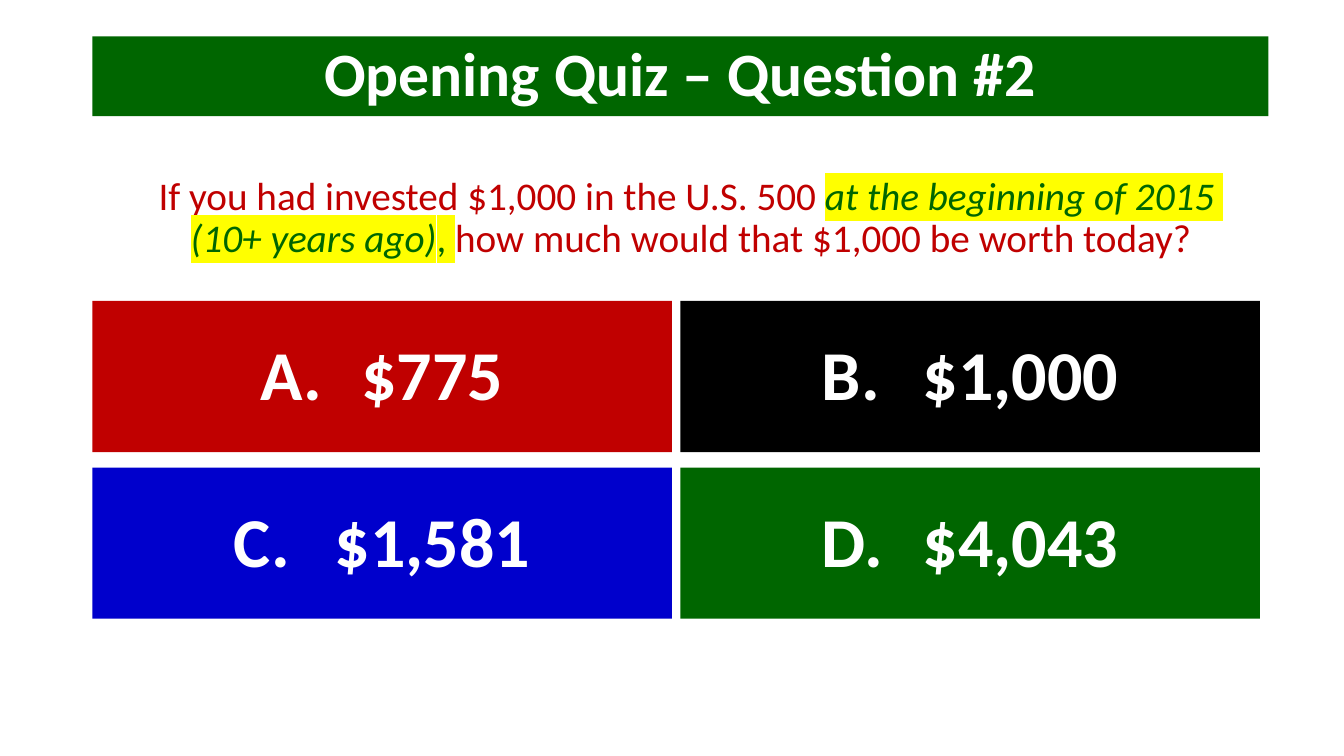
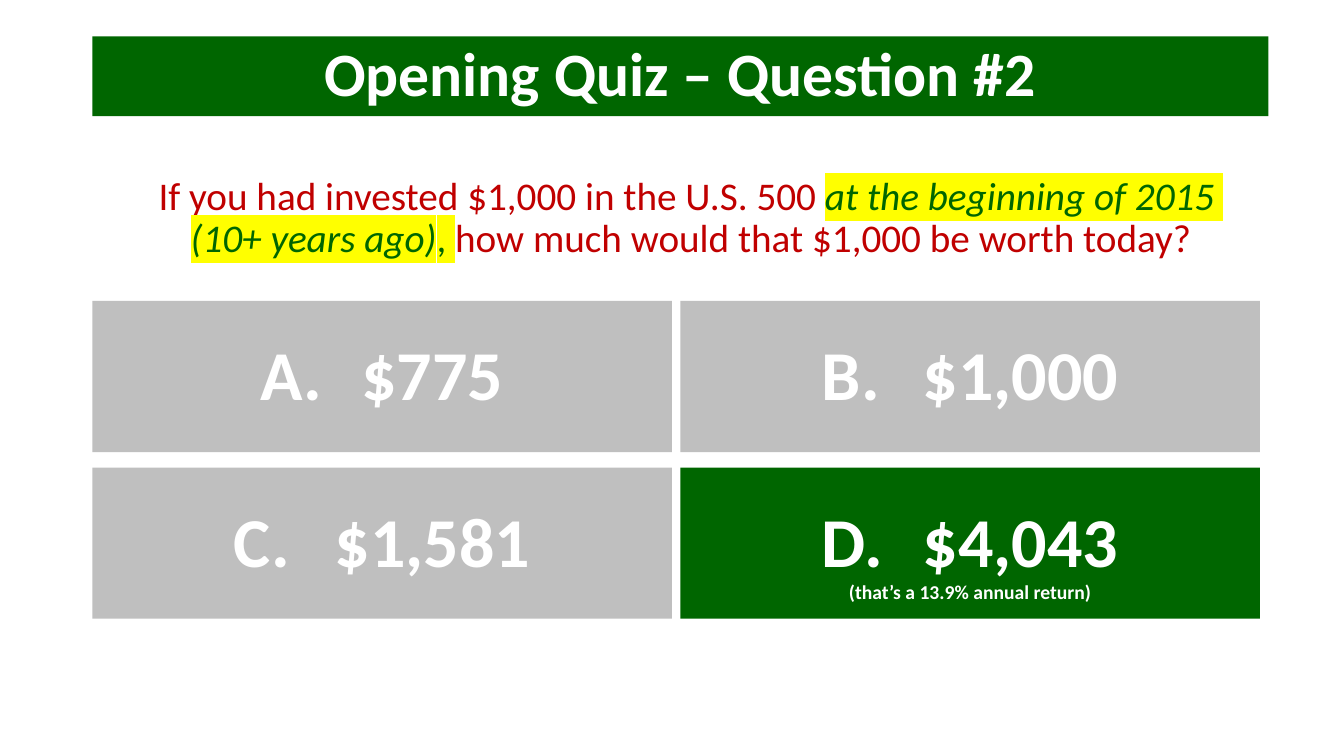
from lxml.etree import SubElement
from pptx import Presentation
from pptx.dml.color import RGBColor as Rgb
from pptx.enum.shapes import MSO_SHAPE as Kind
from pptx.enum.text import MSO_ANCHOR as Anchor, MSO_AUTO_SIZE as Fit, PP_ALIGN as Align
from pptx.oxml.ns import qn
from pptx.util import Pt

HUES = {
    "green": "006600",
    "red": "C00000",
    "blue": "0000CC",
    "black": "000000",
    "gray": "BFBFBF",
    "white": "FFFFFF",
    "yellow": "FFFF00",
}
TITLE = "Opening Quiz – Question #2"
QUERY = [
    ("If you had invested $1,000 in the U.S. 500 ", "plain"),
    ("at the beginning of 2015 ", "slant"),
    ("\v", "break"),
    ("(10+ years ago)", "slant"),
    (", ", "mark"),
    ("how much would that $1,000 be worth today?", "plain"),
]
PICKS = ["A.\t$775", "B.\t$1,000", "C.\t$1,581", "D.\t$4,043"]
NOTE = "\v(that’s a 13.9% annual return)"
ROUNDS = [
    (["red", "black", "blue", "green"], ""),
    (["gray", "gray", "gray", "green"], NOTE),
]


class Quiz:
    face = "Calibri"
    left = 66
    inset = 28

    def __init__(self):
        self.deck = Presentation()
        self.deck.slide_width, self.deck.slide_height = Pt(960), Pt(540)
        self.slide = None

    def start(self):
        self.slide = self.deck.slides.add_slide(self.deck.slide_layouts[1])

    def place(self, shape, left, top, width, height):
        shape.left, shape.top = Pt(left), Pt(top)
        shape.width, shape.height = Pt(width), Pt(height)

    def paint(self, shape, hue):
        shape.fill.solid()
        shape.fill.fore_color.rgb = Rgb.from_string(HUES[hue])

    def frame(self, shape, anchor, inset):
        frame = shape.text_frame
        frame.word_wrap = True
        frame.auto_size = Fit.NONE
        frame.vertical_anchor = anchor
        frame.margin_top = Pt(inset)
        return frame

    def line(self, para):
        para.alignment = Align.CENTER
        para.line_spacing = 0.9
        para.space_before = Pt(0)

    def style(self, run, size, hue, bold=False, slant=False):
        font = run.font
        font.size, font.name = Pt(size), self.face
        font.bold, font.italic = bold, slant
        font.color.rgb = Rgb.from_string(HUES[hue])

    def light(self, run):
        props = run.font._element
        mark = SubElement(props, qn("a:highlight"))
        SubElement(mark, qn("a:srgbClr"), val=HUES["yellow"])
        props.find(qn("a:solidFill")).addnext(mark)

    def title(self, text):
        shape = self.slide.shapes.title
        self.place(shape, self.left, 26, 840, 57)
        self.paint(shape, "green")
        frame = self.frame(shape, Anchor.MIDDLE, 3.6)
        frame.text = text
        para = frame.paragraphs[0]
        self.line(para)
        self.style(para.runs[0], 44, "white", bold=True)

    def query(self, parts):
        shape = self.slide.placeholders[1]
        self.place(shape, self.left, 98, 855, 389)
        para = self.frame(shape, Anchor.TOP, self.inset).paragraphs[0]
        self.line(para)
        props = para._p.get_or_add_pPr()
        props.set("marL", "0")
        props.set("indent", "0")
        SubElement(props, qn("a:buNone"))
        for text, look in parts:
            if look == "break":
                para.add_line_break()
                continue
            run = para.add_run()
            run.text = text
            hue = "red" if look == "plain" else "green"
            self.style(run, 28, hue, slant=look == "slant")
            if look != "plain":
                self.light(run)

    def pick(self, spot, text, hue):
        row, col = divmod(spot, 2)
        wide, high = 414, 108
        shape = self.slide.shapes.add_shape(
            Kind.RECTANGLE,
            Pt(self.left + col * (wide + 6)), Pt(215 + row * (high + 11)),
            Pt(wide), Pt(high))
        shape.shadow.inherit = False
        self.paint(shape, hue)
        shape.line.fill.background()
        frame = self.frame(shape, Anchor.TOP, self.inset)
        frame.text = text
        para = frame.paragraphs[0]
        self.line(para)
        tabs = SubElement(para._p.get_or_add_pPr(), qn("a:tabLst"))
        SubElement(tabs, qn("a:tab"), pos=str(Pt(72)), algn="l")
        for run, size in zip(para.runs, (50, 14)):
            self.style(run, size, "white", bold=True)


def main():
    quiz = Quiz()
    for hues, note in ROUNDS:
        quiz.start()
        quiz.title(TITLE)
        quiz.query(QUERY)
        for spot, (text, hue) in enumerate(zip(PICKS, hues)):
            tail = note if spot == len(PICKS) - 1 else ""
            quiz.pick(spot, text + tail, hue)
    quiz.deck.save("out.pptx")


if __name__ == "__main__":
    main()
